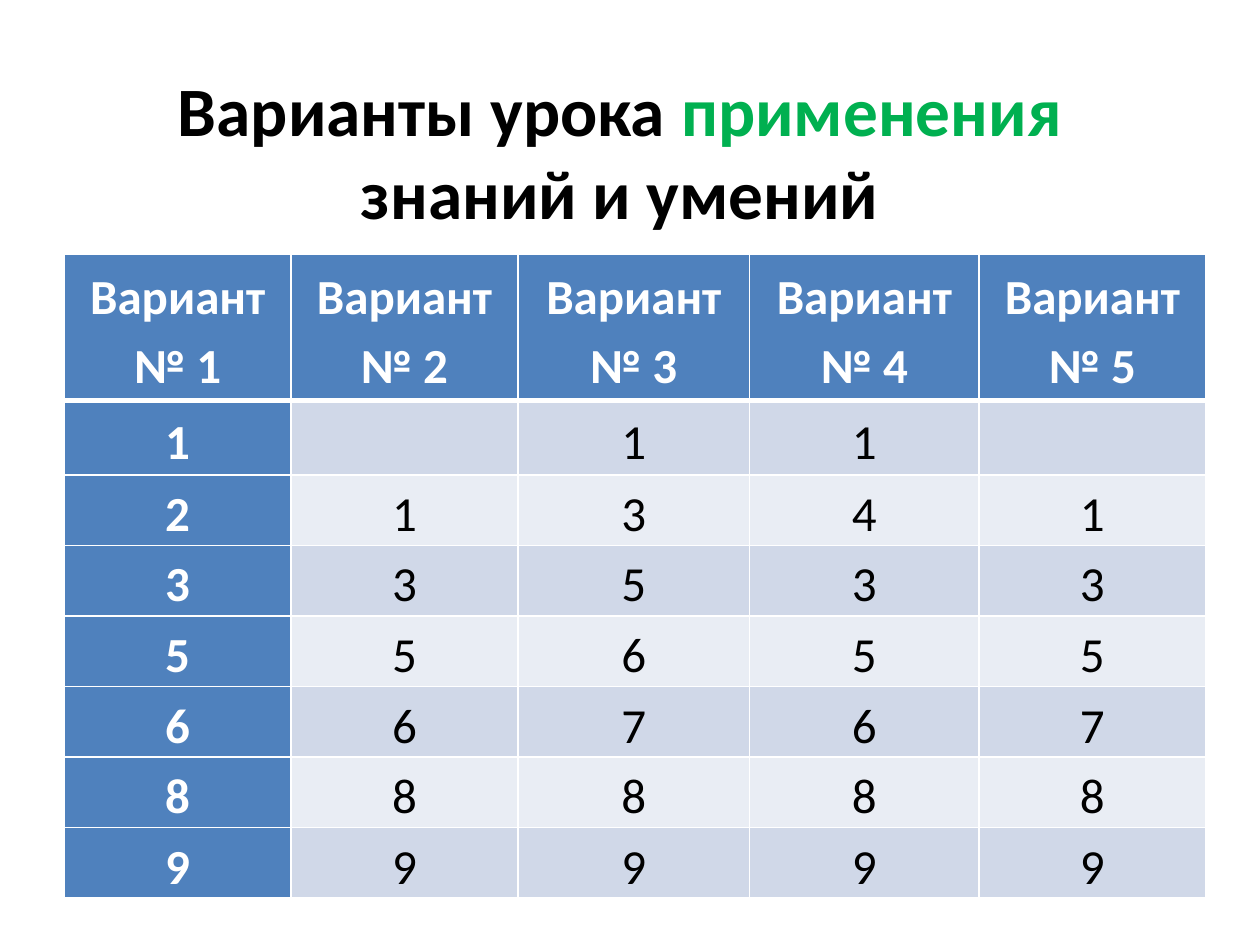
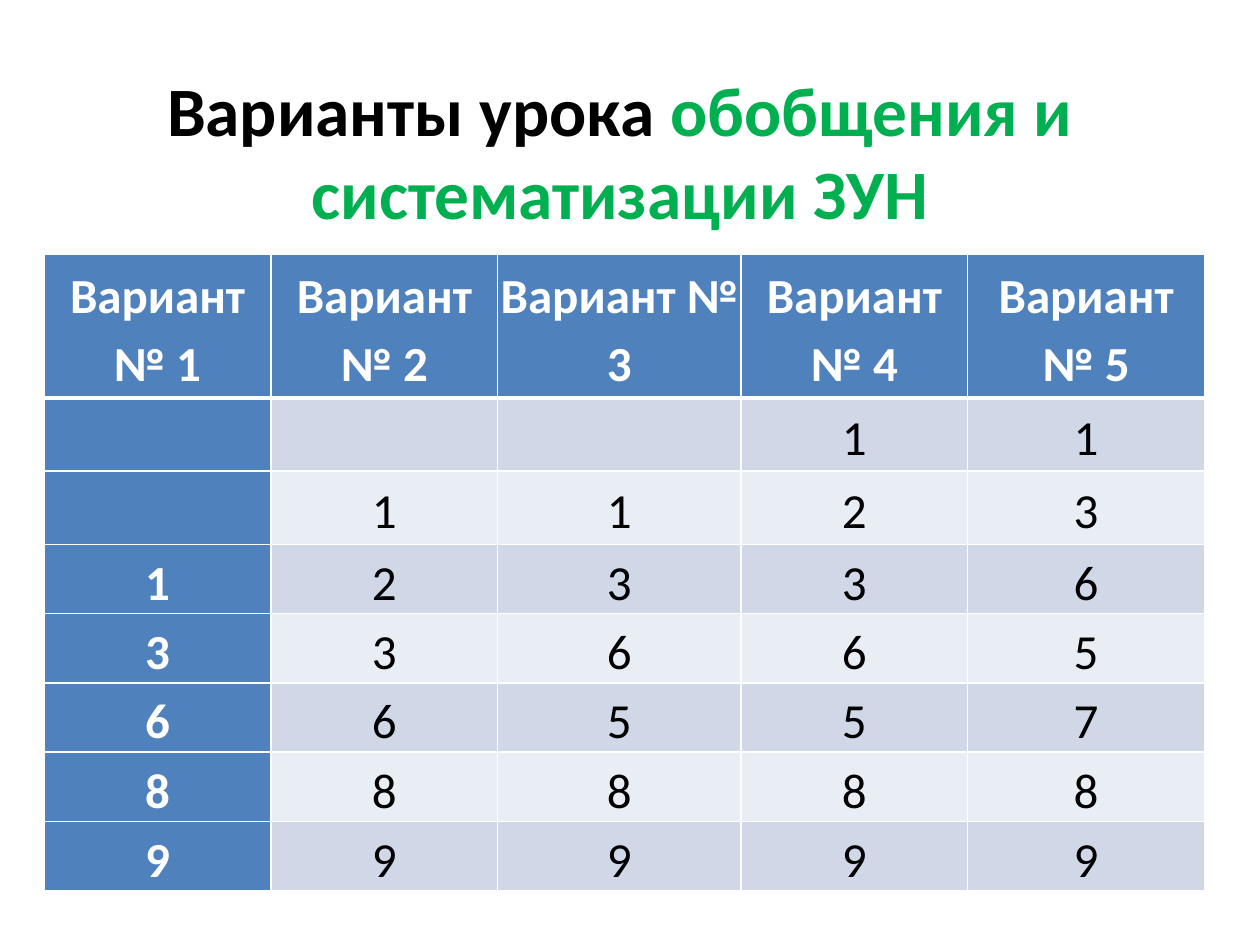
"""Builds two slides that compare lesson variants in tables."""
from lxml import etree
from pptx import Presentation
from pptx.dml.color import RGBColor
from pptx.enum.text import MSO_ANCHOR, PP_ALIGN
from pptx.oxml.ns import qn
from pptx.util import Inches, Pt

CENTER, MIDDLE = PP_ALIGN.CENTER, MSO_ANCHOR.MIDDLE
FONT, TITLE_SIZE, TABLE_SIZE = "Calibri", 39.6, 28
BLACK, WHITE, GREEN, BLUE = "000000", "FFFFFF", "00B050", "4F81BD"
BANDS = ("D0D8E8", "E9EDF4")
TITLE_BOX = (0.67, 0.52, 8.5, 1.34)
TABLE_TOP = 2.02
HEADERS = [f"Вариант № {number}" for number in range(1, 6)]

SLIDES = [
    {
        "title": [("Варианты урока ", BLACK), ("применения ", GREEN), ("знаний и умений", BLACK)],
        "left": 0.51,
        "columns": [1.8, 1.8, 1.84, 1.82, 1.8],
        "rows": [1.16, 0.59] + [0.56] * 6,
        "values": [
            ["1", "", "1", "1", ""],
            ["2", "1", "3", "4", "1"],
            ["3", "3", "5", "3", "3"],
            ["5", "5", "6", "5", "5"],
            ["6", "6", "7", "6", "7"],
            ["8"] * 5,
            ["9"] * 5,
        ],
    },
    {
        "title": [("Варианты урока ", BLACK), ("обобщения и систематизации ЗУН", GREEN)],
        "left": 0.35,
        "columns": [1.8, 1.8, 1.93, 1.8, 1.88],
        "rows": [1.14, 0.58, 0.58] + [0.55] * 5,
        "values": [
            ["", "", "", "1", "1"],
            ["", "1", "1", "2", "3"],
            ["1", "2", "3", "3", "6"],
            ["3", "3", "6", "6", "5"],
            ["6", "6", "5", "5", "7"],
            ["8"] * 5,
            ["9"] * 5,
        ],
    },
]


def color(value):
    return RGBColor.from_string(value)


def add_run(paragraph, text, size, text_color, bold):
    run = paragraph.add_run()
    run.text = text
    run.font.name, run.font.size, run.font.bold = FONT, Pt(size), bold
    run.font.color.rgb = color(text_color)


def add_title(slide, runs):
    frame = slide.shapes.add_textbox(*map(Inches, TITLE_BOX)).text_frame
    frame.word_wrap = True
    frame.vertical_anchor = MIDDLE
    frame.margin_top = frame.margin_bottom = 0
    paragraph = frame.paragraphs[0]
    paragraph.alignment = CENTER
    for text, text_color in runs:
        add_run(paragraph, text, TITLE_SIZE, text_color, True)


def set_borders(cell, bottom_width):
    properties = cell._tc.get_or_add_tcPr()
    widths = {"a:lnL": 1, "a:lnR": 1, "a:lnT": 1, "a:lnB": bottom_width}
    for index, (side, width) in enumerate(widths.items()):
        line = etree.Element(qn(side), w=str(Pt(width)))
        fill = etree.SubElement(line, qn("a:solidFill"))
        etree.SubElement(fill, qn("a:srgbClr"), val=WHITE)
        properties.insert(index, line)


def fill_cell(cell, text, row, column):
    heading = row == 0 or column == 0
    cell.fill.solid()
    cell.fill.fore_color.rgb = color(BLUE if heading else BANDS[(row - 1) % 2])
    cell.vertical_anchor = MIDDLE
    cell.margin_left = cell.margin_right = cell.margin_top = cell.margin_bottom = 0
    set_borders(cell, 3 if row == 0 else 1)
    if text:
        paragraph = cell.text_frame.paragraphs[0]
        paragraph.alignment = CENTER
        paragraph.line_spacing = 1.15
        add_run(paragraph, text, TABLE_SIZE, WHITE if heading else BLACK, heading)


def add_variant_table(slide, left, columns, rows, values):
    frame = slide.shapes.add_table(
        len(rows), len(columns), Inches(left), Inches(TABLE_TOP),
        Inches(sum(columns)), Inches(sum(rows)))
    table = frame.table
    table.first_col = True
    for column, width in zip(table.columns, columns):
        column.width = Inches(width)
    for row, height in zip(table.rows, rows):
        row.height = Inches(height)
    for row, texts in enumerate([HEADERS] + values):
        for column, text in enumerate(texts):
            fill_cell(table.cell(row, column), text, row, column)


def main():
    presentation = Presentation()
    presentation.slide_width, presentation.slide_height = Inches(10), Inches(7.5)
    for content in SLIDES:
        slide = presentation.slides.add_slide(presentation.slide_layouts[6])
        add_title(slide, content["title"])
        add_variant_table(slide, content["left"], content["columns"],
                          content["rows"], content["values"])
    presentation.save("out.pptx")


if __name__ == "__main__":
    main()
